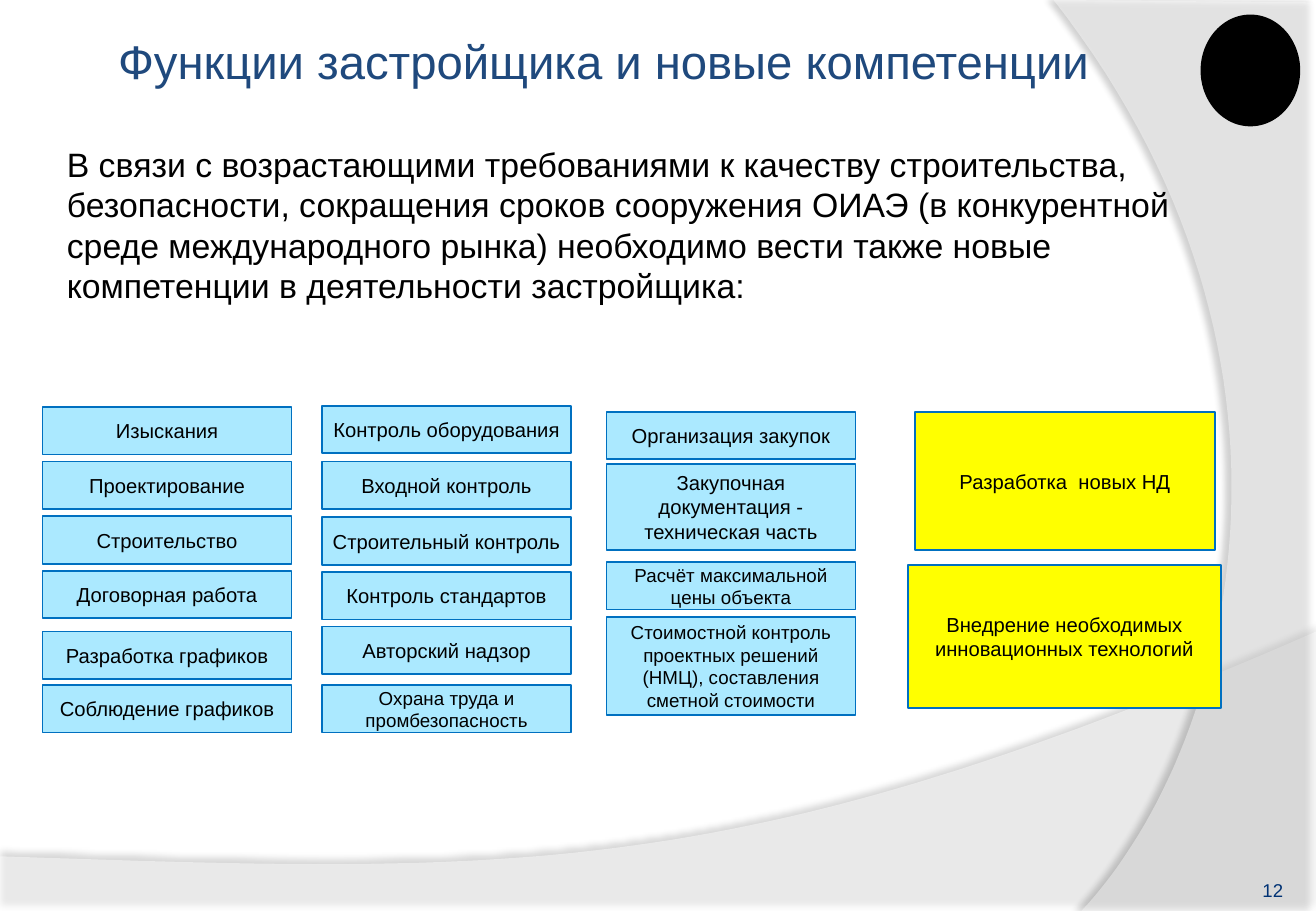
from lxml.etree import SubElement
from pptx import Presentation
from pptx.dml.color import RGBColor
from pptx.enum.shapes import MSO_SHAPE as Shape
from pptx.enum.text import MSO_ANCHOR as Anchor, PP_ALIGN as Align
from pptx.oxml.ns import qn
from pptx.util import Inches, Pt

WIDTH, HEIGHT = 10.83, 7.5
GRID_TOP, ROW = 3.35, 0.45
LOW, NORMAL, SMALL = 0.87, 12, 11.1
UNITS = 1000
COLORS = {
    "white": "FFFFFF", "black": "000000", "title": "1F497D", "number": "003274",
    "current": "ABE9FF", "new": "FFFF00", "border": "0070C0",
}

# Each entry: left edge, width, fill, then (row, rows high, font size, wording).
COLUMNS = [
    (0.35, 2.05, "current", [
        (0, LOW, NORMAL, "Изыскания"),
        (1, LOW, NORMAL, "Проектирование"),
        (2, LOW, NORMAL, "Строительство"),
        (3, LOW, NORMAL, "Договорная работа"),
        (4.11, LOW, NORMAL, "Разработка графиков"),
        (5.09, LOW, NORMAL, "Соблюдение графиков"),
    ]),
    (2.65, 2.05, "current", [
        (-0.02, LOW, NORMAL, "Контроль оборудования"),
        (1, LOW, NORMAL, "Входной контроль"),
        (2.02, LOW, NORMAL, "Строительный контроль"),
        (3.02, LOW, NORMAL, "Контроль стандартов"),
        (4.02, LOW, NORMAL, "Авторский надзор"),
        (5.09, LOW, SMALL, "Охрана труда и промбезопасность"),
    ]),
    (4.99, 2.05, "current", [
        (0.09, LOW, NORMAL, "Организация закупок"),
        (1.04, 1.58, NORMAL, "Закупочная документация - техническая часть"),
        (2.84, LOW, SMALL, "Расчёт максимальной цены объекта"),
        (3.84, 1.8, SMALL, "Стоимостной контроль проектных решений (НМЦ), "
                           "составления сметной стоимости"),
    ]),
    (7.53, 2.47, "new", [(0.09, 2.53, NORMAL, "Разработка  новых НД")]),
    (7.47, 2.58, "new", [
        (2.89, 2.62, NORMAL, "Внедрение необходимых инновационных технологий"),
    ]),
]
REQUIREMENT = (
    "В связи с возрастающими требованиями к качеству строительства, безопасности, "
    "сокращения сроков сооружения ОИАЭ (в конкурентной среде международного рынка) "
    "необходимо вести также новые компетенции в деятельности застройщика:"
)


def rgb(name):
    """Return the named colour."""
    return RGBColor.from_string(COLORS[name])


def paint(shape, fill, border=None):
    """Give a shape a flat fill and, if named, a thin border."""
    shape.shadow.inherit = False
    shape.fill.solid()
    shape.fill.fore_color.rgb = rgb(fill)
    if border:
        shape.line.color.rgb = rgb(border)
        shape.line.width = Pt(1)
    else:
        shape.line.fill.background()


def write(shape, wording, size, color="black", align=Align.LEFT,
          anchor=Anchor.TOP, inset=(0, 0), spacing=None):
    """Write one formatted paragraph into a shape."""
    frame = shape.text_frame
    across, down = map(Inches, inset)
    layout = {"word_wrap": True, "vertical_anchor": anchor,
              "margin_left": across, "margin_right": across,
              "margin_top": down, "margin_bottom": down}
    for name, value in layout.items():
        setattr(frame, name, value)
    paragraph = frame.paragraphs[0]
    paragraph.alignment = align
    paragraph.line_spacing = spacing
    run = paragraph.add_run()
    run.text = wording
    for name, value in {"name": "Arial", "size": Pt(size)}.items():
        setattr(run.font, name, value)
    run.font.color.rgb = rgb(color)


def add_text(slide, area, wording, size, **style):
    """Add a text box over an area given in inches."""
    write(slide.shapes.add_textbox(*map(Inches, area)), wording, size, **style)


def add_function(slide, left, width, fill, row, rows, size, wording):
    """Add the box of one function at its grid row."""
    area = left, GRID_TOP + row * ROW, width, rows * ROW
    box = slide.shapes.add_shape(Shape.RECTANGLE, *map(Inches, area))
    paint(box, fill, "border")
    write(box, wording, size, align=Align.CENTER, anchor=Anchor.MIDDLE,
          inset=(0.04, 0.04))


def curve(start, pull, push, end, steps=60):
    """Return points along a cubic curve."""
    shares = [step / steps for step in range(steps + 1)]
    return [tuple((1 - t) ** 3 * a + 3 * (1 - t) ** 2 * t * b
                  + 3 * (1 - t) * t ** 2 * c + t ** 3 * d
                  for a, b, c, d in zip(start, pull, push, end)) for t in shares]


def add_alpha(color, percent):
    """Set the opacity of a colour element."""
    SubElement(color, qn("a:alpha"), val=str(percent * 1000))


def add_wave(slide, outline, opacity, shade, blur, distance, angle):
    """Add a translucent white wave with a soft shadow."""
    points = [(x * UNITS, y * UNITS) for x, y in outline]
    builder = slide.shapes.build_freeform(*points[0], scale=Inches(1) / UNITS)
    builder.add_line_segments(points[1:], close=True)
    wave = builder.convert_to_shape()
    paint(wave, "white")
    properties = wave.element.spPr
    add_alpha(properties.find(qn("a:solidFill"))[0], opacity)
    shadow = SubElement(
        properties.find(qn("a:effectLst")), qn("a:outerShdw"),
        blurRad=str(Pt(blur)), dist=str(Pt(distance)), dir=str(angle * 60000),
        algn="ctr", rotWithShape="0")
    add_alpha(SubElement(shadow, qn("a:srgbClr"), val=COLORS["black"]), shade)


def add_backdrop(slide):
    """Add the two waves and the round emblem."""
    lower = [(0, HEIGHT), (WIDTH, HEIGHT)]
    lower += curve((WIDTH, 5.2), (6.06, 7.29), (4.23, 7.19), (0, 7.05))
    right = [(WIDTH, 0.02), (WIDTH, HEIGHT)]
    right += curve((8.9, HEIGHT), (10.12, 6.19), (11.02, 3), (8.67, 0))
    add_wave(slide, lower, 45, 35, 4, 3.5, 270)
    add_wave(slide, right, 40, 45, 4, 4, 180)
    emblem = slide.shapes.add_shape(
        Shape.OVAL, *map(Inches, (9.88, 0.12, 0.82, 0.92)))
    paint(emblem, "black")


def main():
    """Build and save the slide."""
    deck = Presentation()
    deck.slide_width, deck.slide_height = Inches(WIDTH), Inches(HEIGHT)
    slide = deck.slides.add_slide(deck.slide_layouts[6])
    add_backdrop(slide)
    add_text(slide, (0.54, 0.35, 8.85, 0.38),
             "Функции застройщика и новые компетенции", 28, color="title",
             align=Align.CENTER, anchor=Anchor.MIDDLE, spacing=0.8)
    add_text(slide, (0.44, 1.12, 9.98, 5.63), REQUIREMENT, 20, inset=(0.11, 0.06))
    add_text(slide, (9.66, 7.02, 0.9, 0.4), "12", 11, color="number",
             align=Align.RIGHT, anchor=Anchor.BOTTOM)
    for left, width, fill, functions in COLUMNS:
        for function in functions:
            add_function(slide, left, width, fill, *function)
    deck.save("out.pptx")


if __name__ == "__main__":
    main()
